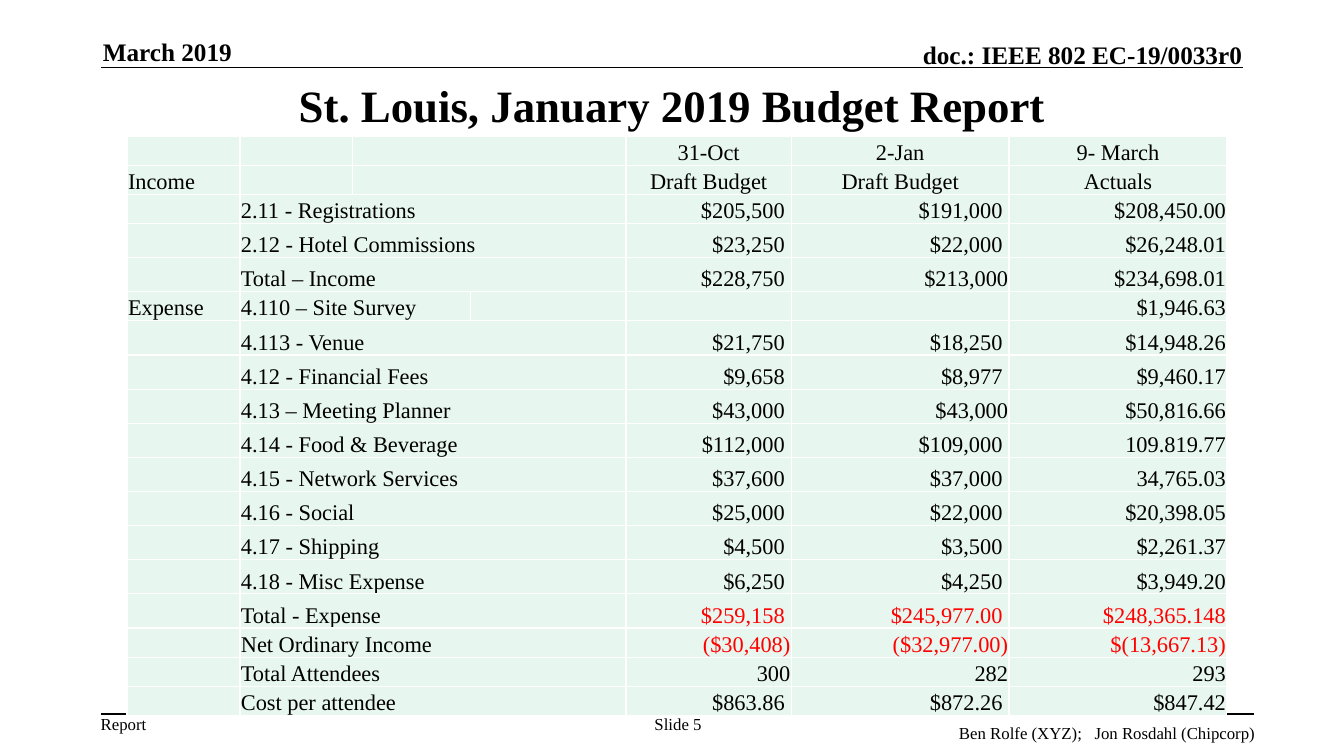
"""Build the meeting budget report slide."""
import lxml.etree
import pptx
import pptx.dml.color
import pptx.enum.shapes
import pptx.enum.text
import pptx.oxml.ns
import pptx.util

FONT = "Times New Roman"
COLORS = {"ink": "000000", "loss": "FF0000", "cell": "E7F6EF", "rule": "FFFFFF"}
ALIGN = pptx.enum.text.PP_ALIGN
ANCHOR = pptx.enum.text.MSO_ANCHOR
WIDTH, HEIGHT = pptx.util.Inches(13.33), pptx.util.Inches(7.5)
COLUMNS = [1.12, 1.12, 1.17, 1.54, 1.64, 2.16, 2.16]
SHORT, TALL = 0.29, 0.34
SHORT_ROWS = {0, 1, 2, 5, 15, 16, 17}
LOSS_ROWS = {14, 15}
MERGES = {0: (2, 3), 1: (2, 3), 5: (1, 2)}
ROWS = [
    ("", "", "31-Oct", "2-Jan", "9- March"),
    ("Income", "", "Draft Budget", "Draft Budget", "Actuals"),
    ("", "2.11 - Registrations", "$205,500 ", "$191,000 ", "$208,450.00"),
    ("", "2.12 - Hotel Commissions", "$23,250 ", "$22,000 ", "$26,248.01"),
    ("", "Total – Income", "$228,750 ", "$213,000", "$234,698.01"),
    ("Expense", "4.110 – Site Survey", "", "", "$1,946.63"),
    ("", "4.113 - Venue", "$21,750 ", "$18,250 ", "$14,948.26"),
    ("", "4.12 - Financial Fees", "$9,658 ", "$8,977 ", "$9,460.17"),
    ("", "4.13 – Meeting Planner", "$43,000 ", "$43,000", "$50,816.66"),
    ("", "4.14 - Food & Beverage", "$112,000 ", "$109,000 ", "109.819.77"),
    ("", "4.15 - Network Services", "$37,600 ", "$37,000 ", "34,765.03"),
    ("", "4.16 - Social", "$25,000 ", "$22,000 ", "$20,398.05"),
    ("", "4.17 - Shipping", "$4,500 ", "$3,500 ", "$2,261.37"),
    ("", "4.18 - Misc Expense", "$6,250 ", "$4,250 ", "$3,949.20"),
    ("", "Total - Expense", "$259,158 ", "$245,977.00 ", "$248,365.148"),
    ("", "Net Ordinary Income", "($30,408)", "($32,977.00)", "$(13,667.13)"),
    ("", "Total Attendees", "300", "282", "293"),
    ("", "Cost per attendee", "$863.86 ", "$872.26 ", "$847.42"),
]


def across(share):
    """Return a percentage of the slide width."""
    return int(WIDTH * share / 100)


def down(share):
    """Return a percentage of the slide height."""
    return int(HEIGHT * share / 100)


def box(left, top, width, height):
    """Turn percentages of the slide into a position and size."""
    return across(left), down(top), across(width), down(height)


def rgb(name):
    """Look up a named colour."""
    return pptx.dml.color.RGBColor.from_string(COLORS[name])


def write(tf, text, size, align, bold=False, color="ink"):
    """Set and format the only paragraph of a text frame."""
    tf.text = text
    p = tf.paragraphs[0]
    p.alignment = align
    for r in p.runs:
        r.font.name, r.font.size, r.font.bold = FONT, pptx.util.Pt(size), bold
        r.font.color.rgb = rgb(color)


def add_title(s, text):
    """Place and format the title placeholder."""
    sp = s.shapes.title
    sp.left, sp.top, sp.width, sp.height = box(7.5, 10, 85, 7.73)
    tf = sp.text_frame
    tf.auto_size = pptx.enum.text.MSO_AUTO_SIZE.NONE
    tf.vertical_anchor = ANCHOR.MIDDLE
    write(tf, text, 32, ALIGN.CENTER, True)


def add_label(s, text, place, size, align, anchor=ANCHOR.TOP, bold=False):
    """Add a header or footer text without insets."""
    tf = s.shapes.add_textbox(*box(*place)).text_frame
    tf.word_wrap = True
    tf.vertical_anchor = anchor
    tf.margin_left = tf.margin_right = tf.margin_top = tf.margin_bottom = 0
    write(tf, text, size, align, bold)


def add_rule(s, left, right, top):
    """Add a thin horizontal line."""
    straight = pptx.enum.shapes.MSO_CONNECTOR.STRAIGHT
    sp = s.shapes.add_connector(straight, across(left), down(top), across(right), down(top))
    sp.line.color.rgb = rgb("ink")
    sp.line.width = pptx.util.Pt(1)
    lxml.etree.SubElement(sp._element.spPr, pptx.oxml.ns.qn("a:effectLst"))


def style_cell(cell):
    """Give a cell its borders, fill, insets and empty-text size."""
    qn = pptx.oxml.ns.qn
    tc_pr = cell._tc.get_or_add_tcPr()
    for side in ("L", "R", "T", "B"):
        ln = lxml.etree.SubElement(tc_pr, qn("a:ln" + side), w="12700")
        fill = lxml.etree.SubElement(ln, qn("a:solidFill"))
        lxml.etree.SubElement(fill, qn("a:srgbClr"), val=COLORS["rule"])
    cell.fill.solid()
    cell.fill.fore_color.rgb = rgb("cell")
    cell.margin_left = cell.margin_right = cell.margin_top = pptx.util.Inches(0.01)
    cell.margin_bottom = 0
    cell.vertical_anchor = ANCHOR.BOTTOM
    end = lxml.etree.SubElement(cell.text_frame.paragraphs[0]._p, qn("a:endParaRPr"), sz="1600")
    lxml.etree.SubElement(end, qn("a:latin"), typeface=FONT)


def add_budget(s):
    """Add the budget table."""
    place = box(9.45, 18, 81.85, 76.67)
    table = s.shapes.add_table(len(ROWS), len(COLUMNS), *place).table
    table.first_row = table.horz_banding = False
    heights = [SHORT if i in SHORT_ROWS else TALL for i in range(len(ROWS))]
    for column, share in zip(table.columns, COLUMNS):
        column.width = int(place[2] * share / sum(COLUMNS))
    for row, share in zip(table.rows, heights):
        row.height = int(place[3] * share / sum(heights))
    for i, values in enumerate(ROWS):
        for col, text in zip((0, 1, 4, 5, 6), values):
            if text:
                figure = ALIGN.CENTER if i < 2 else ALIGN.RIGHT
                align = figure if col > 3 else ALIGN.LEFT
                color = "loss" if col > 3 and i in LOSS_ROWS else "ink"
                write(table.cell(i, col).text_frame, text, 16, align, color=color)
        for col in range(len(COLUMNS)):
            style_cell(table.cell(i, col))
        first, last = MERGES.get(i, (1, 3))
        table.cell(i, first).merge(table.cell(i, last))


def main():
    """Build and save the slide."""
    prs = pptx.Presentation()
    prs.slide_width, prs.slide_height = WIDTH, HEIGHT
    s = prs.slides.add_slide(prs.slide_layouts[5])
    add_rule(s, 7.5, 92.5, 8.93)
    add_rule(s, 7.5, 93.32, 94.47)
    add_title(s, "St. Louis, January 2019 Budget Report")
    add_label(s, "March 2019", (7.65, 4.8, 20.5, 4), 18, ALIGN.LEFT, ANCHOR.BOTTOM, True)
    add_label(s, "doc.: IEEE 802 EC-19/0033r0", (39.16, 5.2, 53.26, 4), 18,
              ALIGN.RIGHT, ANCHOR.BOTTOM, True)
    add_label(s, "Report", (7.5, 94.4, 3.45, 2.67), 12, ALIGN.LEFT)
    add_label(s, "Slide 5", (47.56, 94.4, 5.78, 5.33), 12, ALIGN.CENTER)
    add_label(s, "Ben Rolfe (XYZ);   Jon Rosdahl (Chipcorp)", (59.94, 95.6, 33.46, 2.67), 12,
              ALIGN.RIGHT)
    add_budget(s)
    prs.save("out.pptx")


if __name__ == "__main__":
    main()
